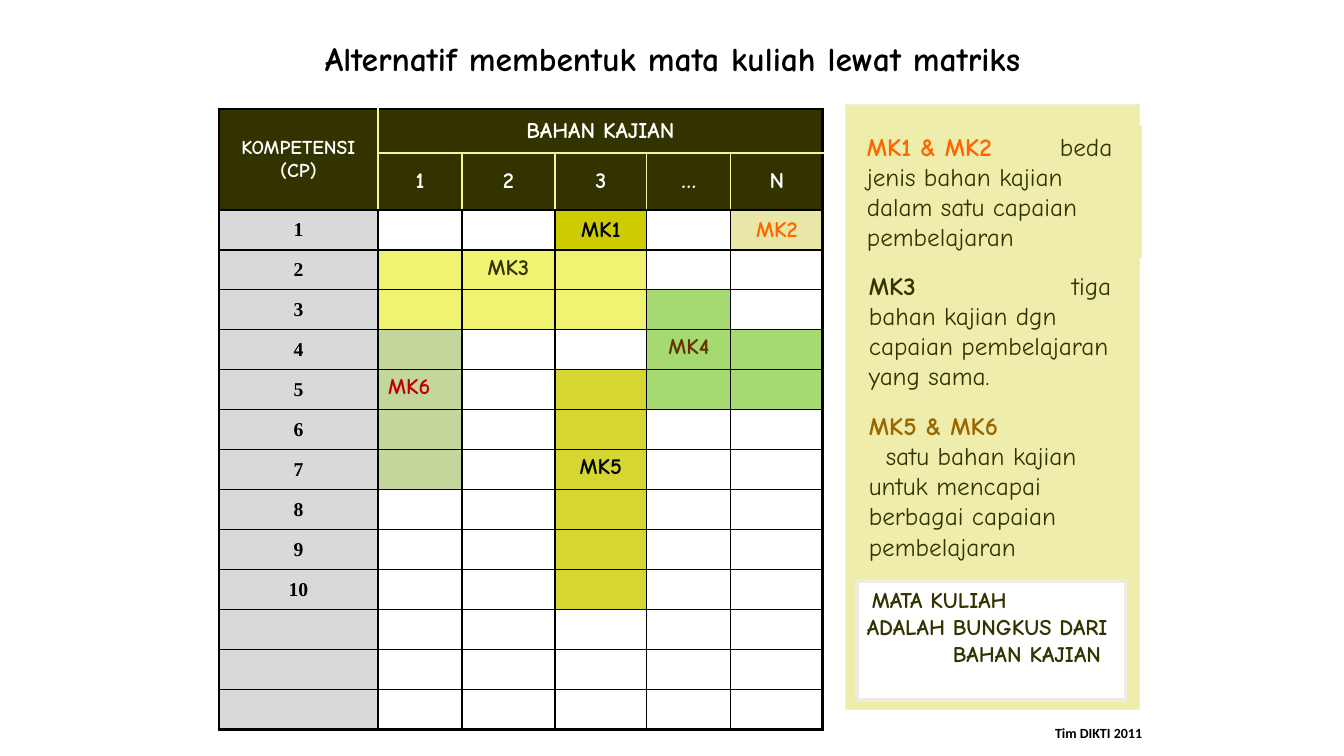
from lxml.etree import SubElement
from pptx import Presentation
from pptx.dml.color import RGBColor
from pptx.enum.shapes import MSO_SHAPE
from pptx.enum.text import MSO_ANCHOR, PP_ALIGN
from pptx.oxml.ns import qn
from pptx.util import Emu, Pt

WIDE, HIGH = 1344, 756
SCALE = 12192000 / WIDE

BLACK = RGBColor(0x00, 0x00, 0x00)
WHITE = RGBColor(0xFF, 0xFF, 0xFF)
DARK = RGBColor(0x33, 0x33, 0x00)
PALE = RGBColor(0xF8, 0xF6, 0x92)
GREY = RGBColor(0xD9, 0xD9, 0xD9)
EDGE = RGBColor(0xEE, 0xEC, 0xE1)
CREAM = RGBColor(0xEF, 0xED, 0xAB)
SAND = RGBColor(0xE3, 0xE1, 0x91)
LEMON = RGBColor(0xF0, 0xF3, 0x71)
OLIVE = RGBColor(0xCC, 0xCC, 0x00)
GREEN = RGBColor(0x92, 0xD0, 0x50)
SAGE = RGBColor(0xC3, 0xD6, 0x9B)
ORANGE = RGBColor(0xFF, 0x66, 0x00)
BROWN = RGBColor(0x66, 0x33, 0x00)
OCHRE = RGBColor(0x99, 0x66, 0x00)
RED = RGBColor(0xC0, 0x00, 0x00)

COMIC = "Comic Neue"
TIMES = "Times New Roman"
COLS = [159, 84, 93, 92, 84, 92]
ROWS = [44, 57] + [40] * 13
# Columns and first and last row of each coloured block, then colour and opacity
BLOCKS = [
    ((3, 3), (2, 2), OLIVE, 100),
    ((5, 5), (2, 2), SAND, 80),
    ((1, 3), (3, 4), LEMON, 100),
    ((4, 4), (4, 6), GREEN, 80),
    ((5, 5), (5, 6), GREEN, 80),
    ((1, 1), (5, 8), SAGE, 100),
    ((3, 3), (6, 11), OLIVE, 80),
]
# Row, column: text, colour, alignment, anchor
MARKS = {
    (2, 3): ("MK1", BLACK, PP_ALIGN.CENTER, MSO_ANCHOR.MIDDLE),
    (2, 5): ("MK2", ORANGE, PP_ALIGN.CENTER, MSO_ANCHOR.MIDDLE),
    (3, 2): ("MK3", DARK, PP_ALIGN.CENTER, MSO_ANCHOR.TOP),
    (5, 4): ("MK4", BROWN, PP_ALIGN.CENTER, MSO_ANCHOR.TOP),
    (6, 1): ("MK6", RED, PP_ALIGN.LEFT, MSO_ANCHOR.TOP),
    (8, 3): ("MK5", BLACK, PP_ALIGN.CENTER, MSO_ANCHOR.TOP),
}


def px(n):
    return Emu(round(n * SCALE))


def add_run(para, text, size, color, bold=True, font=COMIC):
    run = para.add_run()
    run.text = text
    run.font.size = Pt(size)
    run.font.name = font
    run.font.bold = bold
    run.font.color.rgb = color


def add_rect(slide, box, fill, line=None, width=0.75):
    rect = slide.shapes.add_shape(MSO_SHAPE.RECTANGLE, *map(px, box))
    rect.shadow.inherit = False
    rect.fill.solid()
    rect.fill.fore_color.rgb = fill
    if line is None:
        rect.line.fill.background()
    else:
        rect.line.color.rgb = line
        rect.line.width = Pt(width)
    rect.text_frame.word_wrap = True
    rect.text_frame.vertical_anchor = MSO_ANCHOR.TOP
    return rect


def add_label(slide, box, text, size, align, font=COMIC):
    frame = slide.shapes.add_textbox(*map(px, box)).text_frame
    frame.word_wrap = True
    para = frame.paragraphs[0]
    para.alignment = align
    add_run(para, text, size, BLACK, font=font)


def row_rule(y, col):
    """Width and colour of the horizontal rule above row y."""
    if y in (0, 2, len(ROWS)) or (y == 1 and col == 0):
        return 2.25, BLACK
    return 1, PALE if y == 1 else BLACK


def col_rule(x, row):
    """Width and colour of the vertical rule left of column x."""
    if x in (0, len(COLS)) or (row == 0 and x > 1):
        return 2.25, BLACK
    if row < 2:
        return 1, PALE
    return (1.5 if x == 1 else 1), BLACK


def set_rules(cell, row, col):
    props = cell._tc.get_or_add_tcPr()
    sides = [("a:lnL", col_rule(col, row)), ("a:lnR", col_rule(col + 1, row)),
             ("a:lnT", row_rule(row, col)), ("a:lnB", row_rule(row + 1, col))]
    for i, (tag, (width, color)) in enumerate(sides):
        line = SubElement(props, qn(tag), w=str(Pt(width)))
        fill = SubElement(line, qn("a:solidFill"))
        SubElement(fill, qn("a:srgbClr"), val=str(color))
        props.insert(i, line)


def cell_fill(row, col):
    if row < 2:
        return DARK, 100
    if col == 0:
        return GREY, 100
    for (left, right), (top, end), color, alpha in BLOCKS:
        if left <= col <= right and top <= row <= end:
            return color, alpha
    return WHITE, 100


def paint(cell, color, alpha):
    cell.fill.solid()
    cell.fill.fore_color.rgb = color
    if alpha < 100:
        tint = cell._tc.tcPr.find(".//" + qn("a:srgbClr"))
        SubElement(tint, qn("a:alpha"), val=str(alpha * 1000))


def write(cell, text, size, color, align=PP_ALIGN.CENTER,
          anchor=MSO_ANCHOR.MIDDLE, font=COMIC):
    cell.vertical_anchor = anchor
    cell.margin_top = cell.margin_bottom = px(5)
    para = cell.text_frame.paragraphs[0]
    para.alignment = align
    add_run(para, text, size, color, font=font)


def add_matrix(slide, left, top):
    table = slide.shapes.add_table(
        len(ROWS), len(COLS), px(left), px(top), px(sum(COLS)), px(sum(ROWS))).table
    table.first_row = table.horz_banding = False
    for col, width in zip(table.columns, COLS):
        col.width = px(width)
    for row, height in zip(table.rows, ROWS):
        row.height = px(height)
    for r in range(len(ROWS)):
        for c in range(len(COLS)):
            cell = table.cell(r, c)
            cell.margin_top = cell.margin_bottom = px(2)
            paint(cell, *cell_fill(r, c))
            set_rules(cell, r, c)
    table.cell(0, 0).merge(table.cell(1, 0))
    table.cell(0, 1).merge(table.cell(0, 5))
    write(table.cell(0, 0), "KOMPETENSI (CP)", 14, WHITE)
    write(table.cell(0, 1), "BAHAN KAJIAN", 16, WHITE)
    for c, head in enumerate("123…N", 1):
        write(table.cell(1, c), head, 16, WHITE)
    for n in range(1, 11):
        write(table.cell(n + 1, 0), str(n), 14, BLACK, font=TIMES)
    for (r, c), (text, color, align, anchor) in MARKS.items():
        write(table.cell(r, c), text, 16, color, align, anchor)


def add_note(slide, box, head, color, tab, text, split=False):
    """Bold head, then text from the tab stop, on a new line if split."""
    para = add_rect(slide, box, CREAM).text_frame.paragraphs[0]
    para.alignment = PP_ALIGN.LEFT
    stops = SubElement(para._p.get_or_add_pPr(), qn("a:tabLst"))
    SubElement(stops, qn("a:tab"), pos=str(px(tab)), algn="l")
    add_run(para, head, 18, color)
    if split:
        para.add_line_break()
    add_run(para, "\t" + text, 18, DARK, False)


def add_wrap(slide, box):
    frame = add_rect(slide, box, WHITE, EDGE, 2.25).text_frame
    lines = [("MATA KULIAH", 5), ("ADALAH BUNGKUS DARI", 0), ("BAHAN KAJIAN", 86)]
    for i, (text, indent) in enumerate(lines):
        para = frame.add_paragraph() if i else frame.paragraphs[0]
        para.alignment = PP_ALIGN.LEFT
        para._p.get_or_add_pPr().set("marL", str(px(indent)))
        add_run(para, text, 16, DARK)


def add_panel(slide, left, top, width, height):
    add_rect(slide, (left, top, width, height), CREAM, EDGE)
    add_note(slide, (left + 11, top + 21, 285, 132), "MK1 & MK2", ORANGE, 193,
             "beda jenis bahan kajian dalam satu capaian pembelajaran")
    add_note(slide, (left + 13, top + 160, 273, 132), "MK3", DARK, 203,
             "tiga bahan kajian dgn capaian pembelajaran yang sama.")
    add_wrap(slide, (left + 11, top + 476, 269, 119))
    add_note(slide, (left + 13, top + 300, 269, 163), "MK5 & MK6", OCHRE, 17,
             "satu bahan kajian untuk mencapai berbagai capaian pembelajaran", True)


def main():
    deck = Presentation()
    deck.slide_width, deck.slide_height = px(WIDE), px(HIGH)
    slide = deck.slides.add_slide(deck.slide_layouts[6])
    add_panel(slide, 846, 105, 294, 605)
    add_matrix(slide, 219, 109)
    add_label(slide, (244, 33, 857, 50),
              "Alternatif membentuk mata kuliah lewat matriks", 24, PP_ALIGN.CENTER)
    add_label(slide, (958, 720, 194, 27), "Tim DIKTI 2011", 10, PP_ALIGN.RIGHT, "Calibri")
    deck.save("out.pptx")


if __name__ == "__main__":
    main()
